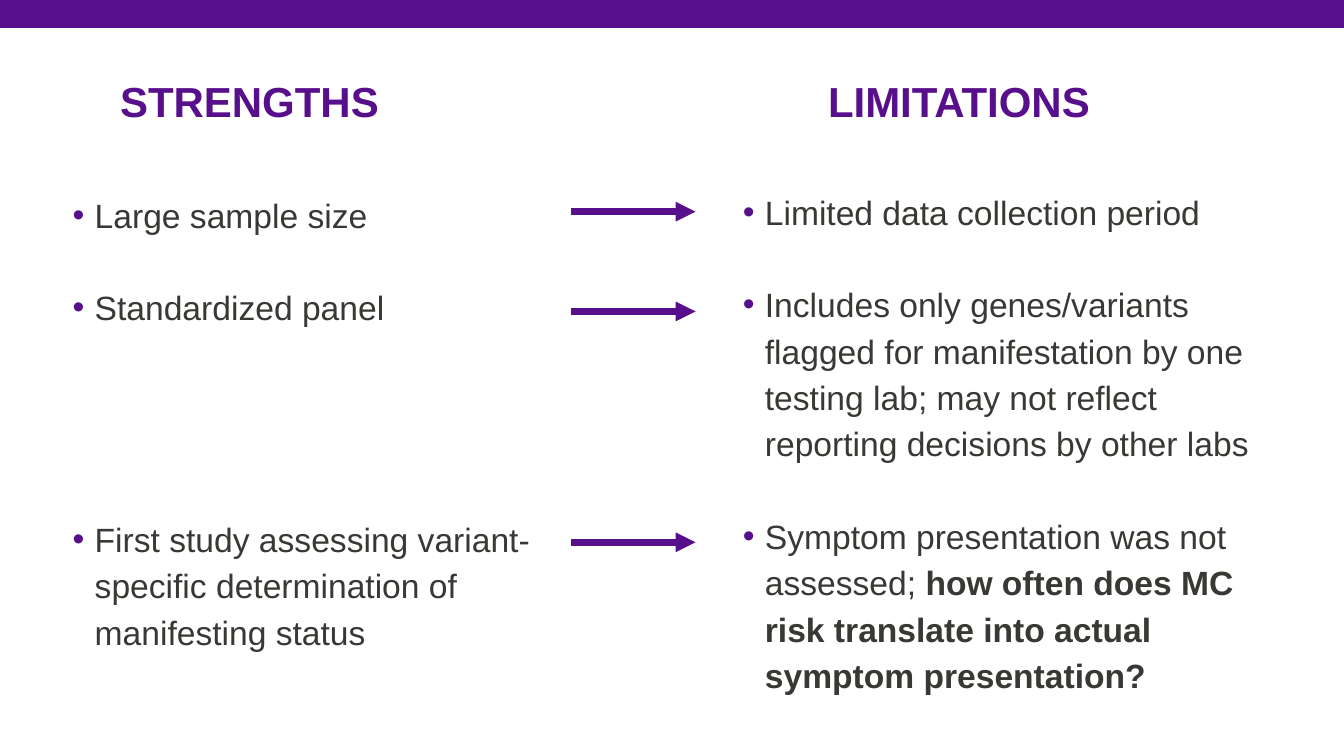
from dataclasses import dataclass

from lxml import etree
from pptx import Presentation
from pptx.dml.color import RGBColor
from pptx.enum.shapes import MSO_CONNECTOR, MSO_SHAPE
from pptx.enum.text import MSO_ANCHOR, PP_ALIGN
from pptx.oxml.ns import qn
from pptx.util import Pt

LINE = MSO_CONNECTOR.STRAIGHT
RECT = MSO_SHAPE.RECTANGLE
TOP, BOTTOM = MSO_ANCHOR.TOP, MSO_ANCHOR.BOTTOM
CENTER = PP_ALIGN.CENTER

COLORS = {"purple": "580F8B", "text": "383834"}
FONT = "Arial"
ROW = 33.1


@dataclass
class Box:
    left: float
    top: float
    width: float
    height: float


@dataclass
class Point:
    text: str
    bold: str = ""
    gap: int = 0


@dataclass
class Column:
    title: str
    head: Box
    body: Box
    inset: tuple[float, float]
    points: list[Point]


COLUMNS = [
    Column("STRENGTHS", Box(81.4, 65.5, 193.7, 24.5),
           Box(49.7, 134.6, 357.8, 359.3), (0, 0), [
        Point("Large sample size"),
        Point("Standardized panel", gap=1),
        Point("First study assessing variant-specific determination of "
              "manifesting status", gap=4),
    ]),
    Column("LIMITATIONS", Box(588.2, 65.5, 193.7, 24.5),
           Box(521.3, 128.9, 380.9, 406.1), (7.2, 3.6), [
        Point("Limited data collection period"),
        Point("Includes only genes/variants flagged for manifestation by one "
              "testing lab; may not reflect reporting decisions by other labs",
              gap=1),
        Point("Symptom presentation was not assessed; ",
              "how often does MC risk translate into actual symptom "
              "presentation?", gap=1),
    ]),
]
ARROWS = [151.2, 222.5, 387.4]


def color(name: str) -> RGBColor:
    return RGBColor.from_string(COLORS[name])


def style(run, size: float, hue: str, bold: bool) -> None:
    run.font.name = FONT
    run.font.size = Pt(size)
    run.font.bold = bold
    run.font.color.rgb = color(hue)


def add_frame(slide, box: Box, inset: tuple[float, float], anchor):
    shape = slide.shapes.add_textbox(
        Pt(box.left), Pt(box.top), Pt(box.width), Pt(box.height))
    frame = shape.text_frame
    frame.word_wrap = True
    frame.vertical_anchor = anchor
    frame.margin_left = frame.margin_right = Pt(inset[0])
    frame.margin_top = frame.margin_bottom = Pt(inset[1])
    return frame


def add_bullet(para) -> None:
    props = para._p.get_or_add_pPr()
    props.set("marL", str(Pt(18)))
    props.set("indent", str(-Pt(15.8)))
    tint = etree.SubElement(props, qn("a:buClr"))
    etree.SubElement(tint, qn("a:srgbClr"), val=COLORS["purple"])
    etree.SubElement(props, qn("a:buFont"), typeface=FONT)
    etree.SubElement(props, qn("a:buChar"), char="•")


def add_column(slide, column: Column) -> None:
    head = add_frame(slide, column.head, (0, 0), BOTTOM)
    head.text = column.title
    para = head.paragraphs[0]
    para.alignment = CENTER
    para.line_spacing = 0.85
    style(para.runs[0], 30, "purple", True)

    body = add_frame(slide, column.body, column.inset, TOP)
    for index, point in enumerate(column.points):
        para = body.add_paragraph() if index else body.paragraphs[0]
        para.text = point.text
        para.line_spacing = 1.15
        para.space_before = Pt(point.gap * ROW)
        add_bullet(para)
        style(para.runs[0], 24, "text", False)
        if point.bold:
            run = para.add_run()
            run.text = point.bold
            style(run, 24, "text", True)


def add_arrow(slide, top: float) -> None:
    arrow = slide.shapes.add_connector(
        LINE, Pt(408.2), Pt(top), Pt(496.8), Pt(top))
    arrow.line.color.rgb = color("purple")
    arrow.line.width = Pt(4.75)
    etree.SubElement(arrow.line._get_or_add_ln(), qn("a:tailEnd"),
                     type="triangle")
    etree.SubElement(arrow._element.spPr, qn("a:effectLst"))


def add_band(slide) -> None:
    band = slide.shapes.add_shape(RECT, Pt(0), Pt(0), Pt(960), Pt(20))
    band.shadow.inherit = False
    band.fill.solid()
    band.fill.fore_color.rgb = color("purple")
    band.line.fill.background()


def main() -> None:
    deck = Presentation()
    deck.slide_width, deck.slide_height = Pt(960), Pt(540)
    slide = deck.slides.add_slide(deck.slide_layouts[6])
    add_band(slide)
    for column in COLUMNS:
        add_column(slide, column)
    for top in ARROWS:
        add_arrow(slide, top)
    deck.save("out.pptx")


if __name__ == "__main__":
    main()
